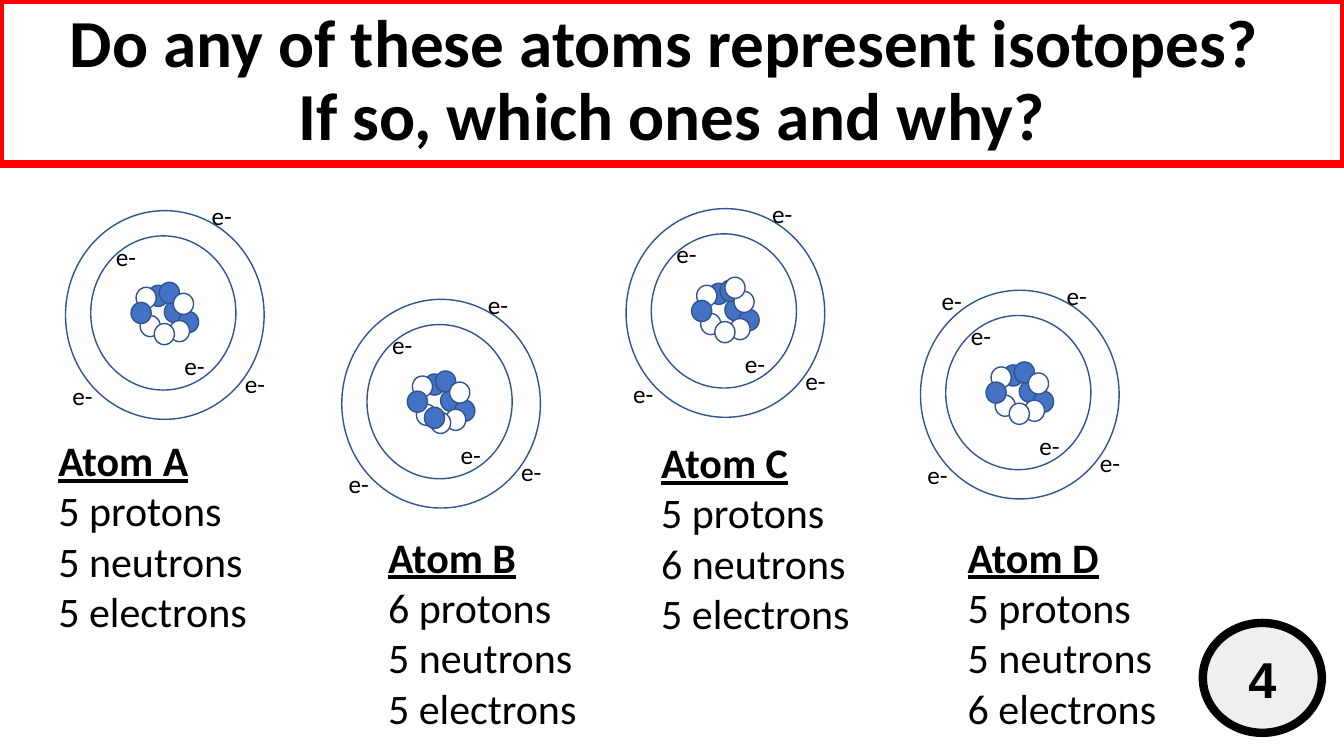
from pptx import Presentation
from pptx import util as u
from pptx.dml.color import RGBColor
from pptx.enum import shapes, text

PX = 9144  # EMU per px, at 100 px to the inch
HUES = {"blue": "4472C4", "edge": "31538F", "white": "FFFFFF",
        "black": "000000", "red": "FF0000", "grey": "EFEFEF"}

# Offsets from the top left corner of an atom's outer shell, back to front
CORE = [("blue", 82, 74), ("blue", 98, 90), ("blue", 112, 100),
        ("blue", 93, 71), ("white", 103, 109), ("white", 70, 76),
        ("white", 74, 104), ("white", 88, 112), ("white", 107, 82),
        ("blue", 65, 91)]
SHELLS = [(25, 25, 144, 153), (0, 0, 197, 207)]
ORBIT = [(40, 25), (108, 134), (135, -15), (-3, 163), (168, 151)]

# Name, atom corner, label box, extra nucleons, extra electrons
ATOMS = [
    ("A", (65, 209), (48, 426, 229, 192), [], []),
    ("B", (339, 297), (375, 522, 229, 192), [("blue", 82, 107)], []),
    ("C", (621, 207), (646, 428, 214, 192), [("white", 98, 68)], []),
    ("D", (913, 288), (950, 522, 214, 192), [], [(11, -10)]),
]


def color(name):
    return RGBColor.from_string(HUES[name])


def scale(*box):
    return [n * PX for n in box]


def outline(shape, hue, width):
    shape.line.color.rgb = color(hue)
    shape.line.width = u.Pt(width)


def style(para, size, face="Calibri", bold=False, under=False):
    for run in para.runs:
        font = run.font
        font.name, font.size = face, u.Pt(size)
        font.bold, font.underline = bold, under
        font.color.rgb = color("black")


def oval(slide, box, fill=None, edge="edge", width=1):
    shape = slide.shapes.add_shape(shapes.MSO_SHAPE.OVAL, *scale(*box))
    shape.shadow.inherit = False
    if fill:
        shape.fill.solid()
        shape.fill.fore_color.rgb = color(fill)
    else:
        shape.fill.background()
    outline(shape, edge, width)
    return shape


def note(slide, box, words):
    frame = slide.shapes.add_textbox(*scale(*box)).text_frame
    frame.word_wrap = True
    frame.text = words
    return frame


def head(slide, words):
    title = slide.shapes.title
    title.left, title.top, title.width, title.height = scale(0, 0, 1333, 163)
    outline(title, "red", 6)
    frame = title.text_frame
    frame.text = words
    frame.auto_size = text.MSO_AUTO_SIZE.NONE
    frame.vertical_anchor = text.MSO_ANCHOR.MIDDLE
    para = frame.paragraphs[0]
    para.alignment = text.PP_ALIGN.CENTER
    para.line_spacing = 0.9
    style(para, 48, bold=True)


def atom(slide, x, y, core, orbit):
    for fill, dx, dy in core:
        oval(slide, (x + dx, y + dy, 20, 21), fill)
    for dx, dy, w, h in SHELLS:
        oval(slide, (x + dx, y + dy, w, h))
    for dx, dy in orbit:
        frame = note(slide, (x + dx, y + dy, 52, 40), "e-")
        style(frame.paragraphs[0], 18)


def label(slide, box, name, core, orbit):
    """List an atom's particles, counted from what is drawn."""
    fills = [fill for fill, _, _ in core]
    rows = [f"Atom {name}", f"{fills.count('blue')} protons",
            f"{fills.count('white')} neutrons", f"{len(orbit)} electrons"]
    frame = note(slide, box, "\n".join(rows))
    for i, para in enumerate(frame.paragraphs):
        style(para, 30, bold=i == 0, under=i == 0)


def badge(slide, box, words):
    shape = oval(slide, box, "grey", "black", 6)
    frame = shape.text_frame
    frame.margin_top = frame.margin_bottom = 10 * PX
    frame.vertical_anchor = text.MSO_ANCHOR.MIDDLE
    frame.text = words
    para = frame.paragraphs[0]
    para.alignment = text.PP_ALIGN.CENTER
    style(para, 36, "Arial", bold=True)


def main():
    deck = Presentation()
    deck.slide_width, deck.slide_height = scale(1333, 750)
    slide = deck.slides.add_slide(deck.slide_layouts[5])
    head(slide, "Do any of these atoms represent isotopes? \v"
                "If so, which ones and why?")
    for name, spot, box, more, extra in ATOMS:
        core, orbit = CORE + more, ORBIT + extra
        atom(slide, *spot, core, orbit)
        label(slide, box, name, core, orbit)
    badge(slide, (1193, 618, 118, 109), "4")
    deck.save("out.pptx")


if __name__ == "__main__":
    main()
